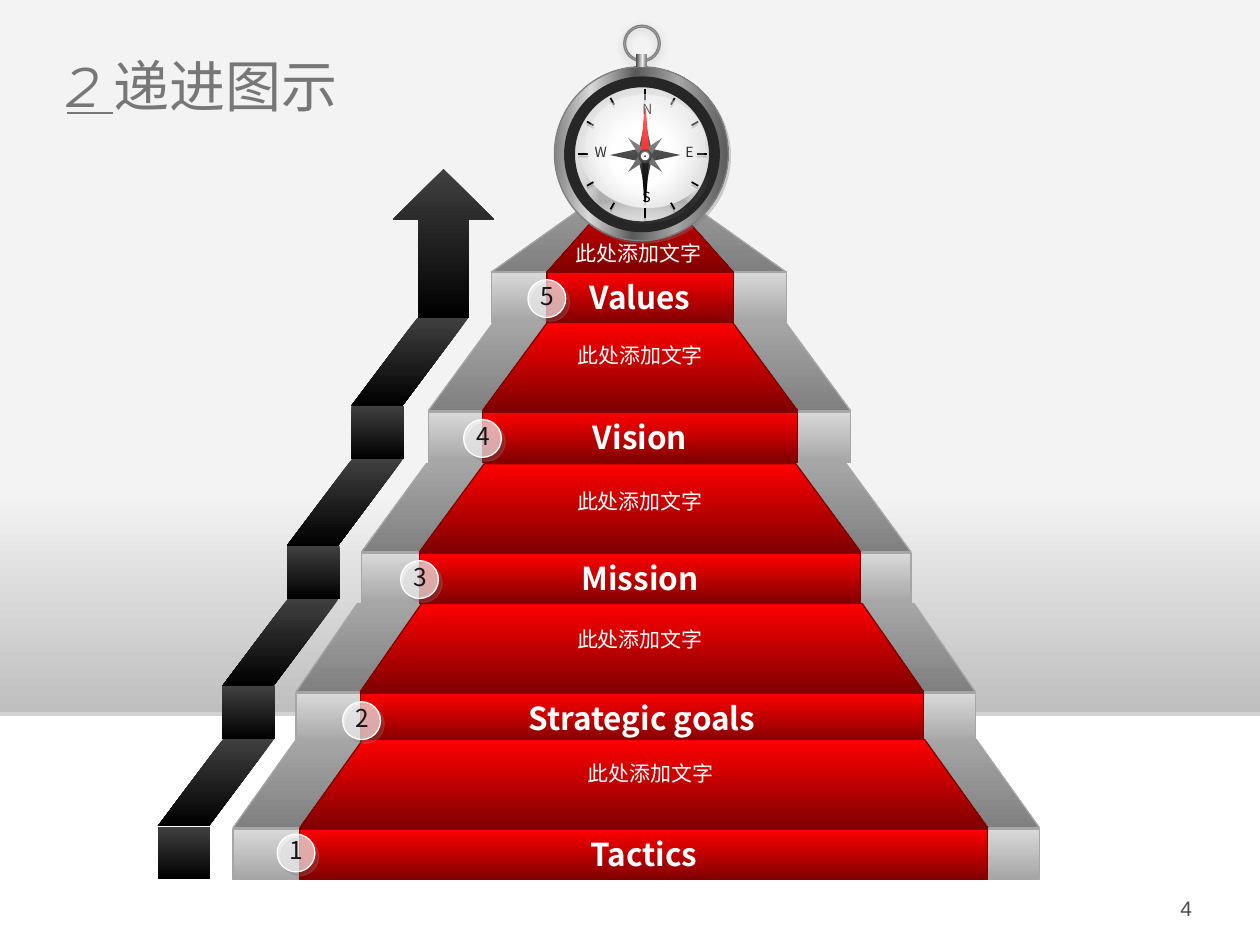
from math import cos, radians, sin

from lxml.etree import SubElement
from pptx import Presentation
from pptx.dml.color import RGBColor
from pptx.enum.shapes import MSO_CONNECTOR, MSO_SHAPE
from pptx.enum.text import MSO_ANCHOR, PP_ALIGN
from pptx.oxml.ns import qn
from pptx.util import Inches, Pt

# Grid: 100 columns by 75 rows
WIDTH, HEIGHT = Inches(10), Inches(7.5)
COL, ROW = WIDTH / 100, HEIGHT / 75

CJK = "Noto Sans CJK SC"
WHITE = RGBColor(0xFF, 0xFF, 0xFF)
BLACK = RGBColor(0, 0, 0)
RED = RGBColor(0xFF, 0, 0)
DARK_RED = RGBColor(0x80, 0, 0)
MIST = RGBColor(0xF3, 0xF3, 0xF3)
PALE = RGBColor(0xD9, 0xD9, 0xD9)
SILVER = RGBColor(0xBF, 0xBF, 0xBF)
GREY = RGBColor(0xA6, 0xA6, 0xA6)
MID_GREY = RGBColor(0x80, 0x80, 0x80)
SLATE = RGBColor(0x59, 0x59, 0x59)
CHARCOAL = RGBColor(0x40, 0x40, 0x40)
INK = RGBColor(0x26, 0x26, 0x26)
TITLE_GREY = RGBColor(0x77, 0x77, 0x77)
NUMBER_GREY = RGBColor(0x4C, 0x4C, 0x4C)

# Label, riser top, wall (left, width), carpet (left, width), tread slope,
# caption (left, top, width), badge (left, top); from the top step down
STEPS = [
    ("Values", 21.6, (39, 23.4), (43.4, 14.8), None, (43.2, 18.6, 15), (41.9, 22.2)),
    ("Vision", 32.7, (34, 33.5), (38.3, 25), 0.735, (43.4, 26.7, 14.8), (36.8, 33.3)),
    ("Mission", 43.9, (28.7, 43.6), (33.3, 35), 0.735, (38.3, 38.3, 25), (31.8, 44.5)),
    ("Strategic goals", 55, (23.5, 53.9), (28.6, 44.7), 0.695, (33.3, 49.2, 35), (27.2, 55.7)),
    ("Tactics", 65.8, (18.5, 64), (23.8, 54.6), 0.715, (30.7, 59.9, 41.8), (22, 66.2)),
]
DIAL_X, DIAL_Y = 51.2, 12.2


def grid(x, y, w, h):
    return round(x * COL), round(y * ROW), round(w * COL), round(h * ROW)


def add_color(parent, color, alpha):
    clr = SubElement(parent, qn("a:srgbClr"), val=str(color))
    if alpha < 100:
        SubElement(clr, qn("a:alpha"), val=str(alpha * 1000))


def set_gradient(shape, stops, angle=90, center=None):
    """Stops are (position, colour[, opacity]); center names a radial type."""
    shape.fill.gradient()
    grad = shape._element.spPr.find(qn("a:gradFill"))
    for child in list(grad):
        grad.remove(child)
    gs_list = SubElement(grad, qn("a:gsLst"))
    for pos, color, *alpha in stops:
        gs = SubElement(gs_list, qn("a:gs"), pos=str(pos * 1000))
        add_color(gs, color, alpha[0] if alpha else 100)
    if center:
        radial = SubElement(grad, qn("a:path"), path=center)
        SubElement(radial, qn("a:fillToRect"), l="50000", t="50000", r="50000", b="50000")
    else:
        SubElement(grad, qn("a:lin"), ang=str(angle * 60000), scaled="0")


def set_shadow(shape, dist=1.8, angle=90, alpha=35, blur=0):
    sp_pr = shape._element.spPr
    effects = sp_pr.find(qn("a:effectLst"))
    if effects is None:
        effects = SubElement(sp_pr, qn("a:effectLst"))
    outer = SubElement(effects, qn("a:outerShdw"), blurRad=str(Pt(blur)),
                       dist=str(Pt(dist)), dir=str(angle * 60000), rotWithShape="0")
    add_color(outer, MID_GREY, alpha)


def add_part(shapes, kind, box, fill=None, line=None, width=0.75, rotation=0, adj=None):
    """Preset shape; a pair of colours as fill runs from top to bottom."""
    s = shapes.add_shape(kind, *grid(*box))
    s.shadow.inherit = False
    s.rotation = rotation
    if adj is not None:
        s.adjustments[0] = adj
    if isinstance(fill, RGBColor):
        s.fill.solid()
        s.fill.fore_color.rgb = fill
    elif fill:
        set_gradient(s, [(0, fill[0]), (100, fill[1])])
    if line is None:
        s.line.fill.background()
    else:
        s.line.color.rgb = line
        s.line.width = Pt(width)
    return s


def write(s, text, size, color=WHITE, align=PP_ALIGN.CENTER, bold=False, name=CJK):
    p = s.text_frame.paragraphs[0]
    p.text, p.alignment = text, align
    p.font.size, p.font.bold, p.font.name = Pt(size), bold, name
    p.font.color.rgb = color
    SubElement(p._p.pPr.find(qn("a:defRPr")), qn("a:ea"), typeface=name)


def add_text(shapes, box, text, size, color, wrap=True, **style):
    s = shapes.add_textbox(*grid(*box))
    s.text_frame.word_wrap = wrap
    write(s, text, size, color, **style)
    return s


def add_stairs(shapes, column, tread_colors, riser_colors, line, labelled=False):
    for step in STEPS:
        label, top, slope = step[0], step[1], step[4]
        left, width = step[column]
        if slope is None:
            add_part(shapes, MSO_SHAPE.ISOSCELES_TRIANGLE, (left, top - 8.3, width, 8.3),
                     tread_colors, line)
        else:
            add_part(shapes, MSO_SHAPE.TRAPEZOID, (left, top - 7.1, width, 7),
                     tread_colors, line, adj=slope)
        s = add_part(shapes, MSO_SHAPE.RECTANGLE, (left, top, width, 4), riser_colors, line)
        if labelled:
            write(s, label, 18, bold=True)


def add_rising_arrow(shapes):
    colors = (CHARCOAL, BLACK)
    for i in range(4):
        x, y = 12.5 + 5.13 * i, 65.6 - 11.13 * i
        add_part(shapes, MSO_SHAPE.RECTANGLE, (x, y, 4.2, 4.2), colors)
        add_part(shapes, MSO_SHAPE.PARALLELOGRAM, (x, y - 7, 9.3, 7), colors, adj=0.75)
    add_part(shapes, MSO_SHAPE.UP_ARROW, (31.2, 13.4, 8, 11.8), colors)


def add_badge(shapes, x, y, number):
    s = add_part(shapes, MSO_SHAPE.OVAL, (x, y, 3, 3), WHITE, WHITE)
    clr = s._element.spPr.find(qn("a:solidFill")).find(qn("a:srgbClr"))
    SubElement(clr, qn("a:alpha"), val="62000")
    set_shadow(s, 3, 45, 40)
    add_text(shapes, (x, y - 0.4, 3.2, 3.4), str(number), 14, RGBColor(0x15, 0x16, 0x16),
             wrap=False, align=PP_ALIGN.LEFT)


def add_tick(shapes, number):
    angle = radians(30 * number)
    center = DIAL_X if number % 6 == 0 else 51
    ends = []
    for radius in (4.3 if number % 3 == 0 else 4.5, 5.1):
        ends += [round((center + radius * sin(angle)) * COL),
                 round((DIAL_Y - radius * cos(angle)) * ROW)]
    c = shapes.add_connector(MSO_CONNECTOR.STRAIGHT, *ends)
    c.line.color.rgb, c.line.width = BLACK, Pt(1)
    set_shadow(c, 1.6, alpha=38)


def add_ray(shapes, angle, w, h, color, line=None):
    """Triangle that points outwards from the centre of the dial."""
    x = DIAL_X + h / 2 * sin(radians(angle))
    y = DIAL_Y + 0.1 - h / 2 * cos(radians(angle))
    return add_part(shapes, MSO_SHAPE.ISOSCELES_TRIANGLE, (x - w / 2, y - h / 2, w, h),
                    color, line, rotation=angle)


def add_compass(shapes):
    # Case and dial
    s = add_part(shapes, MSO_SHAPE.OVAL, (44, 5.3, 13.8, 13.8), line=MID_GREY)
    set_gradient(s, [(0, MID_GREY), (21, PALE), (46, SLATE), (70, GREY), (100, SLATE)], 1)
    set_shadow(s, angle=49)
    s = add_part(shapes, MSO_SHAPE.OVAL, (45.2, 6.5, 11.5, 11.5), line=INK, width=6.25)
    set_gradient(s, [(29, WHITE), (100, SILVER)], center="circle")
    s = add_part(shapes, MSO_SHAPE.MOON, (48.4, 9.9, 5, 10.7), rotation=275.9, adj=0.249)
    set_gradient(s, [(24, BLACK, 24), (100, WHITE, 0)], center="shape")
    for number in range(12):
        add_tick(shapes, number)
    # Hanging ring and its neck
    s = add_part(shapes, MSO_SHAPE.DONUT, (49.5, 2, 2.9, 2.9), SILVER, MID_GREY, adj=0.05)
    set_shadow(s, blur=5)
    s = add_part(shapes, MSO_SHAPE.RECTANGLE, (50.5, 4.3, 0.8, 1))
    set_gradient(s, [(0, CHARCOAL), (38, GREY), (64, MIST), (100, MID_GREY)], 1)
    # Star, needles and hub
    for angle in range(0, 360, 90):
        add_ray(shapes, angle, 1.2, 2.8, INK)
    for angle in range(45, 360, 90):
        add_ray(shapes, angle, 0.8, 1.9, SLATE)
    for angle, color in ((180, BLACK), (0, RED)):
        set_shadow(add_ray(shapes, angle, 0.6, 3.7, color, color))
    add_part(shapes, MSO_SHAPE.OVAL, (50.7, 11.9, 1, 1), (SLATE, INK), INK)
    add_part(shapes, MSO_SHAPE.OVAL, (51, 12.2, 0.4, 0.4), BLACK, WHITE, 1.75)
    # Letters under a glass highlight
    for letter, x, y in (("N", 50, 7.5), ("S", 50, 14.5), ("E", 53.4, 10.9), ("W", 46.2, 10.9)):
        add_text(shapes, (x, y, 2.1, 2.4), letter, 8, BLACK, align=PP_ALIGN.LEFT)
    s = add_part(shapes, MSO_SHAPE.OVAL, (46.5, 7.5, 9.4, 7.8))
    set_gradient(s, [(0, WHITE, 46), (100, WHITE, 0)])


def set_title(title):
    title.left, title.top, title.width, title.height = grid(4.3, 2.8, 91.4, 7.9)
    tf = title.text_frame
    tf.vertical_anchor = MSO_ANCHOR.MIDDLE
    p = tf.paragraphs[0]
    p.alignment = PP_ALIGN.LEFT
    for text, marked in (("2 ", True), ("递进图示", False)):
        r = p.add_run()
        r.text = text
        r.font.name, r.font.size = "Montserrat", Pt(32)
        r.font.italic = r.font.underline = marked
        r.font.color.rgb = TITLE_GREY
        SubElement(r._r.rPr, qn("a:ea"), typeface=CJK)


def main():
    prs = Presentation()
    prs.slide_width, prs.slide_height = WIDTH, HEIGHT
    slide = prs.slides.add_slide(prs.slide_layouts[5])
    shapes = slide.shapes
    set_title(shapes.title)

    # Backdrop, sent behind the title
    s = add_part(shapes, MSO_SHAPE.RECTANGLE, (0, 0, 100, 56.5))
    set_gradient(s, [(0, MIST), (69, MIST), (100, SILVER)])
    set_shadow(s)
    shapes.title._element.addprevious(s._element)

    # Staircase with its carpet, then the compass on top
    add_stairs(shapes.add_group_shape().shapes, 2, (GREY, MID_GREY), (PALE, GREY), GREY)
    add_stairs(shapes, 3, (RED, DARK_RED), (RED, DARK_RED), DARK_RED, labelled=True)
    add_compass(shapes.add_group_shape().shapes)
    add_rising_arrow(shapes)

    # Captions and step numbers
    for i, (*_, caption, badge) in enumerate(STEPS):
        left, top, width = caption
        add_text(shapes, (left, top, width, 3), "此处添加文字", 12, WHITE)
        add_badge(shapes.add_group_shape().shapes, *badge, len(STEPS) - i)

    # Page number
    s = add_text(shapes, (72.3, 70.6, 23.3, 2.9), "4", 12, NUMBER_GREY,
                 align=PP_ALIGN.RIGHT, name="Arial")
    s.text_frame.vertical_anchor = MSO_ANCHOR.MIDDLE
    prs.save("out.pptx")


if __name__ == "__main__":
    main()
